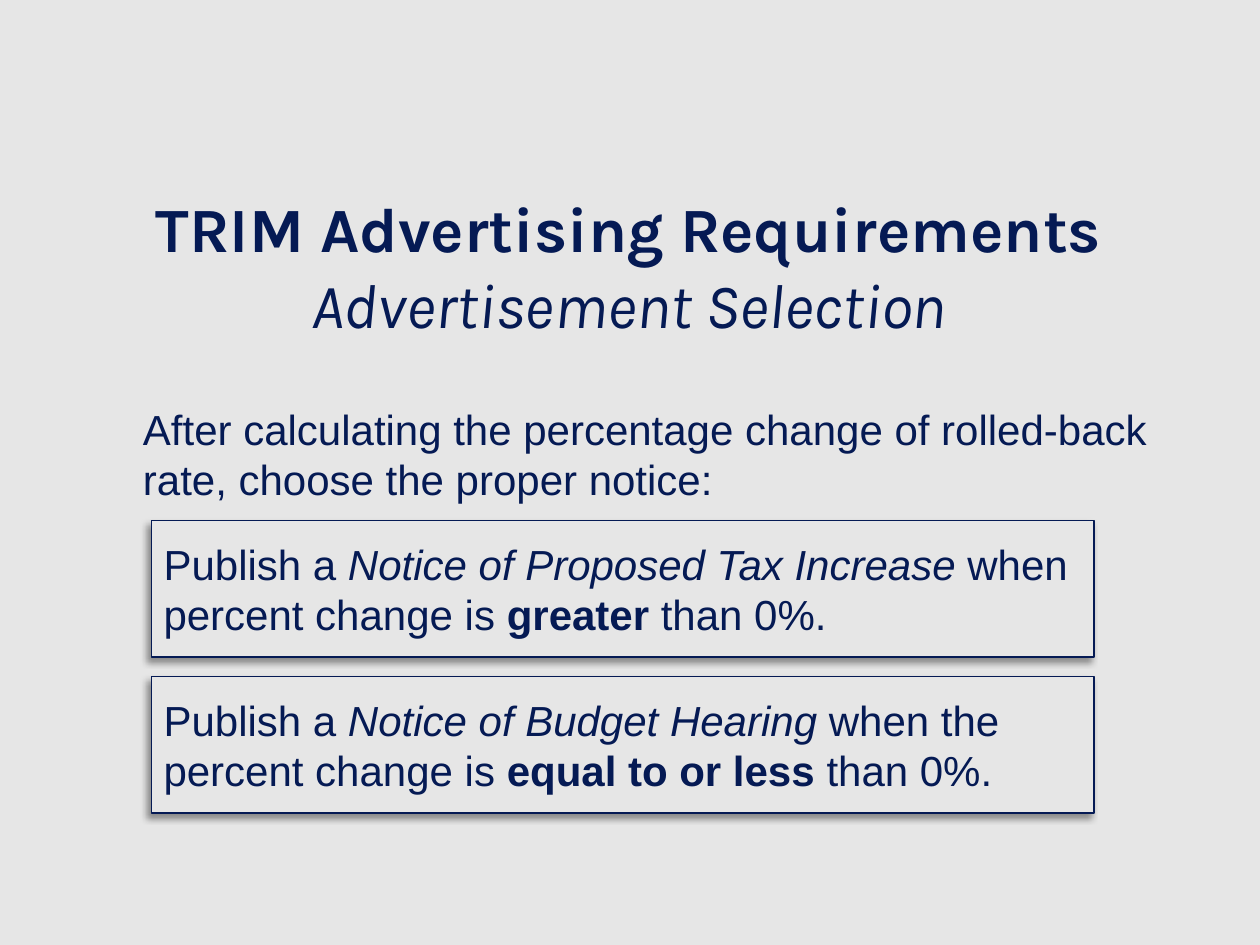
from dataclasses import dataclass
from typing import Any

from lxml import etree
from pptx import Presentation
from pptx.dml import color
from pptx.enum import shapes, text
from pptx.oxml import ns
from pptx.util import Pt

COLORS = {"background": "E6E6E6", "navy": "051A54", "shadow": "000000"}


def rgb(name):
    return color.RGBColor.from_string(COLORS[name])


@dataclass
class NoticeSlide:
    slide: Any
    title_font: str = "Karla"
    body_font: str = "Arial"
    title_size: float = 36
    body_size: float = 24

    def background(self):
        fill = self.slide.background.fill
        fill.solid()
        fill.fore_color.rgb = rgb("background")

    def style(self, paragraph, font_name, size):
        paragraph.font.name = font_name
        paragraph.font.size = Pt(size)
        paragraph.font.color.rgb = rgb("navy")

    def textbox(self, left, top, width, height):
        frame = self.slide.shapes.add_textbox(
            Pt(left), Pt(top), Pt(width), Pt(height)).text_frame
        frame.word_wrap = True
        return frame

    def title(self, heading, subtitle, *box):
        frame = self.textbox(*box)
        frame.vertical_anchor = text.MSO_ANCHOR.MIDDLE
        paragraph = frame.paragraphs[0]
        paragraph.alignment = text.PP_ALIGN.CENTER
        self.style(paragraph, self.title_font, self.title_size)
        run = paragraph.add_run()
        run.text = heading
        run.font.bold = True
        paragraph.add_line_break()
        run = paragraph.add_run()
        run.text = subtitle
        run.font.italic = True

    def body(self, words, indent, *box):
        paragraph = self.textbox(*box).paragraphs[0]
        paragraph.text = words
        properties = paragraph._p.get_or_add_pPr()
        properties.set("marL", str(Pt(indent)))
        properties.set("indent", "0")
        self.style(paragraph, self.body_font, self.body_size)

    def add_shadow(self, shape):
        shape.shadow.inherit = False
        effects = shape._element.spPr.find(ns.qn("a:effectLst"))
        shadow = etree.SubElement(
            effects, ns.qn("a:outerShdw"), blurRad=str(Pt(4)), dist=str(Pt(3)),
            dir=str(135 * 60000), algn="tr", rotWithShape="0")
        tone = etree.SubElement(shadow, ns.qn("a:srgbClr"), val=COLORS["shadow"])
        etree.SubElement(tone, ns.qn("a:alpha"), val="40000")

    def notice(self, runs, left, top, width, height):
        shape = self.slide.shapes.add_shape(
            shapes.MSO_SHAPE.RECTANGLE, Pt(left), Pt(top), Pt(width), Pt(height))
        shape.fill.solid()
        shape.fill.fore_color.rgb = rgb("background")
        shape.line.color.rgb = rgb("navy")
        shape.line.width = Pt(0.75)
        self.add_shadow(shape)
        frame = shape.text_frame
        frame.word_wrap = True
        frame.vertical_anchor = text.MSO_ANCHOR.MIDDLE
        paragraph = frame.paragraphs[0]
        paragraph.alignment = text.PP_ALIGN.LEFT
        self.style(paragraph, self.body_font, self.body_size)
        for words, emphasis in runs:
            run = paragraph.add_run()
            run.text = words
            if emphasis:
                setattr(run.font, emphasis, True)


def main():
    presentation = Presentation()
    presentation.slide_width, presentation.slide_height = Pt(720), Pt(540)
    page = NoticeSlide(presentation.slides.add_slide(presentation.slide_layouts[6]))
    page.background()
    page.title("TRIM Advertising Requirements", "Advertisement Selection",
               19.5, 96, 679.5, 111)
    page.body("After calculating the percentage change of rolled-back rate, "
              "choose the proper notice:", 8.64, 66, 227, 600.5, 84)
    notices = [
        ("Notice of Proposed Tax Increase", " when percent change is ", "greater"),
        ("Notice of Budget Hearing", " when the percent change is ",
         "equal to or less"),
    ]
    for index, (name, condition, comparison) in enumerate(notices):
        runs = [("Publish a ", None), (name, "italic"), (condition, None),
                (comparison, "bold"), (" than 0%.", None)]
        page.notice(runs, 86.4, 297.4 + index * 89.2, 538.8, 78)
    presentation.save("out.pptx")


if __name__ == "__main__":
    main()
